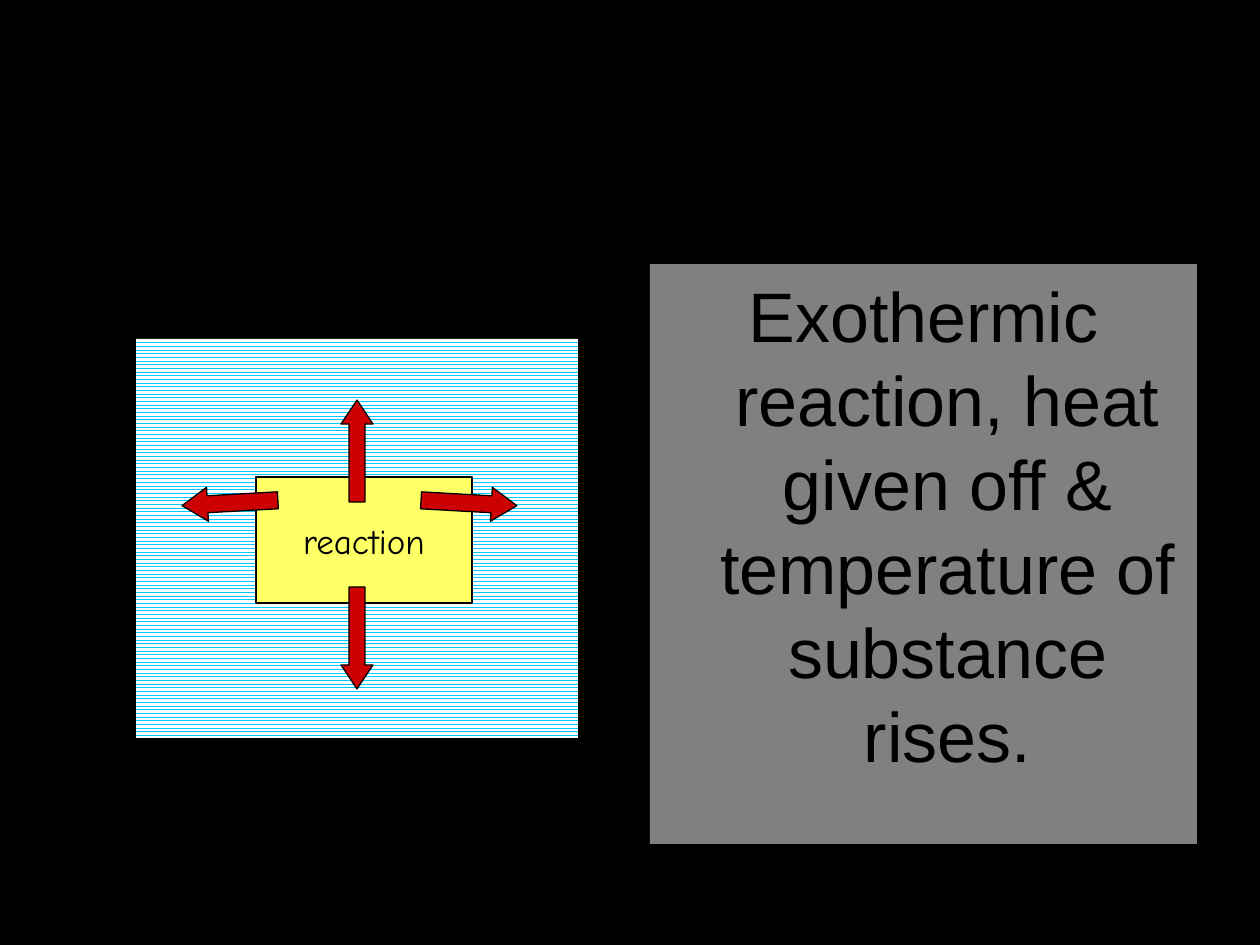
"""Build the exothermic reaction slide: a vessel diagram beside its explanation."""
from lxml.etree import SubElement
from pptx import Presentation
from pptx.dml.color import RGBColor
from pptx.enum.dml import MSO_PATTERN
from pptx.enum.shapes import MSO_CONNECTOR, MSO_SHAPE as SHAPE
from pptx.enum.text import MSO_ANCHOR, MSO_AUTO_SIZE, PP_ALIGN
from pptx.oxml.ns import qn
from pptx.util import Emu, Pt

SCALE = 914400 / 126
COLORS = {
    name: RGBColor.from_string(value)
    for name, value in {
        "black": "000000", "panel": "808080", "water": "00CCFF",
        "white": "FFFFFF", "reaction": "FFFF66", "heat": "CC0000",
    }.items()
}


def px(*lengths):
    return [Emu(round(length * SCALE)) for length in lengths]


def write(frame, text, font_name, size):
    paragraph = frame.paragraphs[0]
    paragraph.alignment = PP_ALIGN.CENTER
    run = paragraph.add_run()
    run.text = text
    for key, value in {"name": font_name, "size": Pt(size)}.items():
        setattr(run.font, key, value)
    run.font.color.rgb = COLORS["black"]
    return paragraph


deck = Presentation()
deck.slide_width, deck.slide_height = px(1260, 945)
slide = deck.slides.add_slide(deck.slide_layouts[1])
slide.background.fill.solid()
slide.background.fill.fore_color.rgb = COLORS["black"]
heading = slide.shapes.title.element
heading.getparent().remove(heading)

explanation = slide.placeholders[1]
explanation.left, explanation.top, explanation.width, explanation.height = px(650, 264, 547, 580)
explanation.fill.solid()
explanation.fill.fore_color.rgb = COLORS["panel"]
body = explanation.text_frame
for key, value in {"auto_size": MSO_AUTO_SIZE.NONE, "word_wrap": True,
                   "vertical_anchor": MSO_ANCHOR.TOP, "margin_top": px(9)[0]}.items():
    setattr(body, key, value)
sentence = write(
    body,
    "Exothermic reaction, heat given off & temperature of substance rises.",
    "Arial", 40,
)
sentence.space_before = Pt(0)
sentence.line_spacing = Pt(48)
sentence_format = sentence._p.get_or_add_pPr()
indent = px(48)[0]
for key, value in {"marL": indent, "indent": -indent}.items():
    sentence_format.set(key, str(value))
SubElement(sentence_format, qn("a:buNone"))

diagram = slide.shapes.add_group_shape().shapes

water = diagram.add_shape(SHAPE.RECTANGLE, *px(134, 339, 446, 401))
water.shadow.inherit = False
water.fill.patterned()
water.fill.pattern = MSO_PATTERN.ZIG_ZAG
water.fill.fore_color.rgb = COLORS["water"]
water.fill.back_color.rgb = COLORS["white"]
water.line.fill.background()

reaction = diagram.add_shape(SHAPE.RECTANGLE, *px(256, 477, 216, 126))
reaction.text_frame.word_wrap = False
reaction.text_frame.vertical_anchor = MSO_ANCHOR.MIDDLE
write(reaction.text_frame, "reaction", "Comic Neue", 20)

for wall_ends in [(134, 264, 134, 740), (580, 264, 580, 740), (134, 740, 580, 740)]:
    wall = diagram.add_connector(MSO_CONNECTOR.STRAIGHT, *px(*wall_ends))
    wall.line.color.rgb = COLORS["black"]
    wall.line.width = Pt(2.25)
    SubElement(wall.element.spPr, qn("a:effectLst"))

outlined = [(reaction, "reaction")]
for left, top, width, height, rotation in [
    (341, 587, 32, 102, 0),
    (452, 455, 34, 96, 273.2),
    (213, 455, 34, 96, 86.8),
    (341, 400, 32, 102, 180),
]:
    heat = diagram.add_shape(SHAPE.DOWN_ARROW, *px(left, top, width, height))
    heat.rotation = rotation
    heat.adjustments[0], heat.adjustments[1] = 0.5, 0.75
    outlined.append((heat, "heat"))

for part, color in outlined:
    part.shadow.inherit = False
    part.fill.solid()
    part.fill.fore_color.rgb = COLORS[color]
    part.line.color.rgb = COLORS["black"]
    part.line.width = Pt(0.75)

deck.save("out.pptx")
